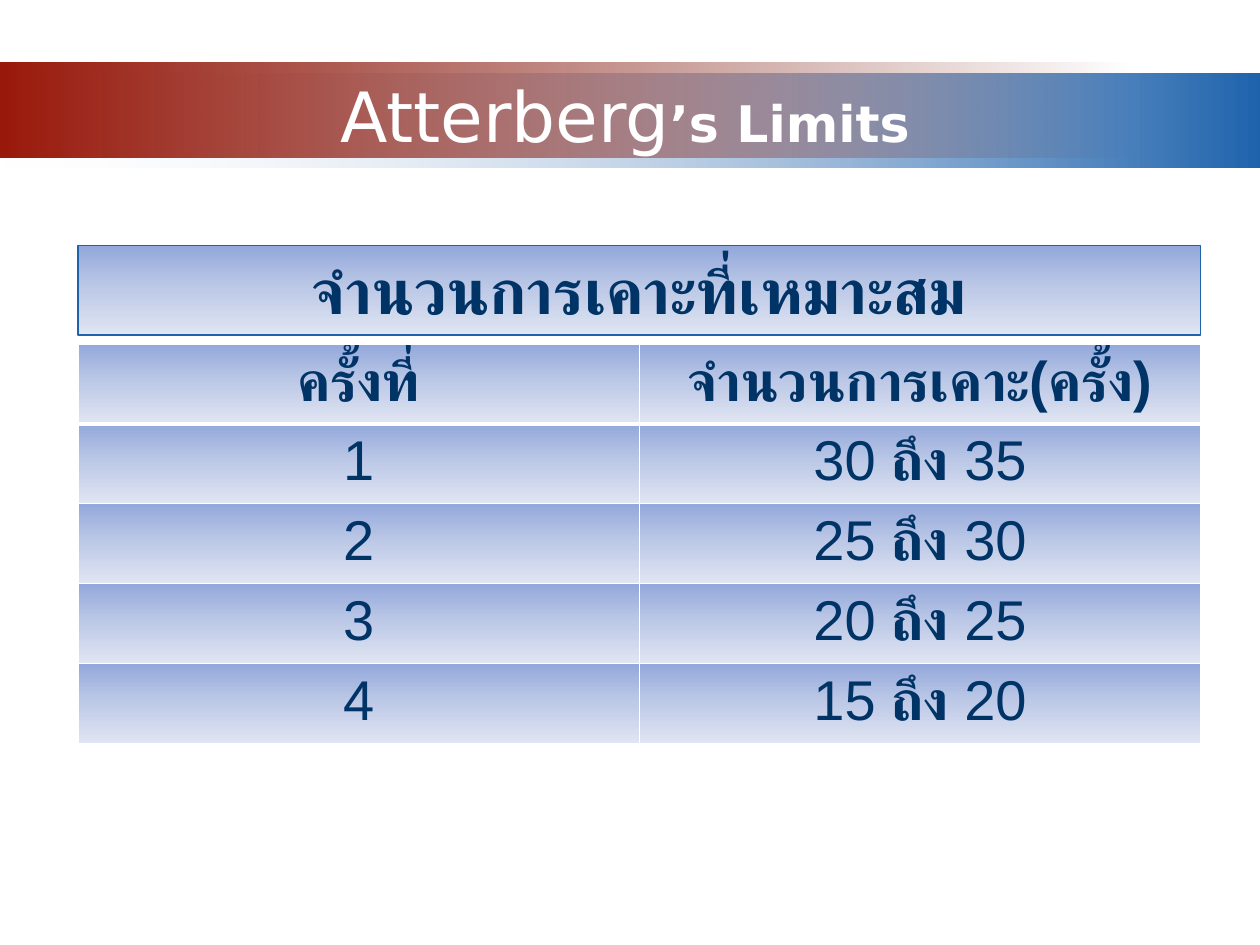
from lxml.etree import SubElement
from pptx import Presentation
from pptx.dml.color import RGBColor
from pptx.enum.shapes import MSO_SHAPE
from pptx.enum.text import MSO_ANCHOR, MSO_AUTO_SIZE, PP_ALIGN
from pptx.oxml.ns import qn
from pptx.util import Inches, Pt

COLORS = {"white": "FFFFFF", "navy": "003366", "blue": "1F63AD",
          "pale": "F1F2F7", "red": "99190B", "dark": "6D1208",
          "top": "93A8DB", "mid": "BECAE7", "low": "E0E5F2"}
PANEL = [(0, "top", 100), (50, "mid", 100), (100, "low", 100)]
ROWS = [("1", "30", "35"), ("2", "25", "30"), ("3", "20", "25"), ("4", "15", "20")]


def write(frame, *runs, size=32, font="Arial", color="navy", anchor=MSO_ANCHOR.TOP):
    """Fill a frame with one centred line of (text, bold[, size]) runs."""
    frame.word_wrap = True
    frame.vertical_anchor = anchor
    line = frame.paragraphs[0]
    line.alignment = PP_ALIGN.CENTER
    for text, bold, *own in runs:
        run = line.add_run()
        run.text = text
        run.font.size = Pt(own[0] if own else size)
        run.font.bold = bold
        run.font.name = font
        run.font.color.rgb = RGBColor.from_string(COLORS[color])
        SubElement(run.font._element, qn("a:cs"), typeface=font)


def shade(fill, props, stops, angle):
    """Set a gradient of (position, colour, opacity) stops, in percent."""
    fill.gradient()
    grad = props.find(qn("a:gradFill"))
    for child in list(grad):
        grad.remove(child)
    group = SubElement(grad, qn("a:gsLst"))
    for place, color, alpha in stops:
        stop = SubElement(group, qn("a:gs"), pos=str(place * 1000))
        tint = SubElement(stop, qn("a:srgbClr"), val=COLORS[color])
        if alpha < 100:
            SubElement(tint, qn("a:alpha"), val=str(alpha * 1000))
    SubElement(grad, qn("a:lin"), ang=str(angle * 60000), scaled="0")


def add_bar(slide, left, top, width, height, stops, angle=0):
    bar = slide.shapes.add_shape(MSO_SHAPE.RECTANGLE, Inches(left), Inches(top),
                                 Inches(width), Inches(height))
    bar.shadow.inherit = False
    bar.line.fill.background()
    shade(bar.fill, bar._element.spPr, stops, angle)
    return bar


def add_title(slide, left, top, width):
    add_bar(slide, left, top + 0.08, width, 0.75, [(0, "pale", 0), (100, "blue", 100)])
    add_bar(slide, left, top, width - 1, 0.75, [(0, "red", 100), (100, "dark", 0)])
    box = slide.shapes.add_textbox(Inches(left + 0.92), Inches(top + 0.1),
                                   Inches(8.08), Inches(0.62))
    write(box.text_frame, ("Atterberg", False, 39.6), ("’s Limits", True, 28.8),
          font="DejaVu Sans", color="white", anchor=MSO_ANCHOR.MIDDLE)


def add_heading(slide, left, top, width):
    bar = add_bar(slide, left, top, width, 0.71, PANEL, 90)
    bar.line.color.rgb = RGBColor.from_string(COLORS["blue"])
    bar.line.width = Pt(0.75)
    write(bar.text_frame, ("จำนวนการเคาะที่เหมาะสม", True), size=36)
    bar.text_frame.auto_size = MSO_AUTO_SIZE.SHAPE_TO_FIT_TEXT


def add_border(props, side, width):
    line = SubElement(props, qn(f"a:ln{side}"), w=str(Pt(width)))
    fill = SubElement(line, qn("a:solidFill"))
    SubElement(fill, qn("a:srgbClr"), val=COLORS["white"])


def add_grid(slide, left, top, width, height):
    lines = [[[("ครั้งที่", True)], [("จำนวนการเคาะ(ครั้ง)", True)]]]
    lines += [[[(count, False)], [(f"{high} ", False), ("ถึง ", True), (low, False)]]
              for count, high, low in ROWS]
    table = slide.shapes.add_table(len(lines), 2, Inches(left), Inches(top),
                                   Inches(width), Inches(height)).table
    for i, line in enumerate(lines):
        for j, runs in enumerate(line):
            cell = table.cell(i, j)
            props = cell._tc.get_or_add_tcPr()
            # A thick rule parts the header from the body.
            for side in "LRTB":
                add_border(props, side, 3 if (i, side) in [(0, "B"), (1, "T")] else 1)
            shade(cell.fill, props, PANEL, 90)
            write(cell.text_frame, *runs)


def main():
    deck = Presentation()
    deck.slide_width, deck.slide_height = Inches(10), Inches(7.5)
    slide = deck.slides.add_slide(deck.slide_layouts[6])
    add_title(slide, 0, 0.5, 10)
    add_heading(slide, 0.62, 1.95, 8.91)
    add_grid(slide, 0.62, 2.73, 8.91, 3.17)
    deck.save("out.pptx")


if __name__ == "__main__":
    main()
